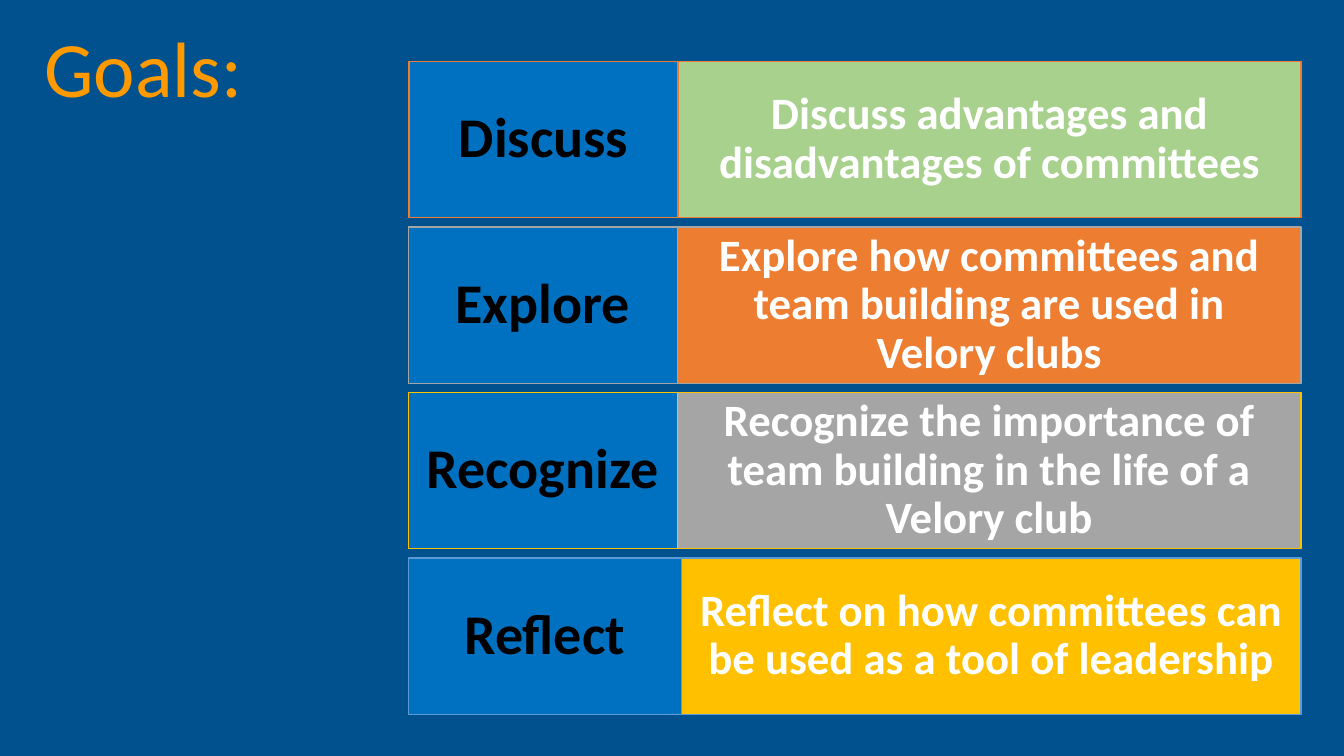
from pptx import Presentation
from pptx.dml.color import RGBColor
from pptx.enum.shapes import MSO_SHAPE
from pptx.enum.text import MSO_ANCHOR, MSO_AUTO_SIZE, PP_ALIGN
from pptx.util import Cm, Pt

NAVY = RGBColor(0x00, 0x51, 0x8E)
BLUE = RGBColor(0x00, 0x70, 0xC0)
SKY = RGBColor(0x5B, 0x9B, 0xD5)
GREEN = RGBColor(0xA9, 0xD1, 0x8E)
ORANGE = RGBColor(0xED, 0x7D, 0x31)
GREY = RGBColor(0xA5, 0xA5, 0xA5)
GOLD = RGBColor(0xFF, 0xC0, 0x00)
AMBER = RGBColor(0xFF, 0x99, 0x00)
WHITE = RGBColor(0xFF, 0xFF, 0xFF)
BLACK = RGBColor(0x00, 0x00, 0x00)

# Goal rows, in cm
ROW_TOP, ROW_PITCH, ROW_HEIGHT = 1.55, 4.17, 3.94
ROW_RIGHT = 32.79

# Verb, goal, goal fill, outline, left edge, divider between verb and goal
GOALS = [
    ("Discuss", "Discuss advantages and disadvantages of committees",
     GREEN, ORANGE, 10.31, 17.09),
    ("Explore", "Explore how committees and team building are used in Velory clubs",
     ORANGE, GREY, 10.29, 17.07),
    ("Recognize", "Recognize the importance of team building in the life of a Velory club",
     GREY, GOLD, 10.29, 17.07),
    ("Reflect", "Reflect on how committees can be used as a tool of leadership",
     GOLD, SKY, 10.29, 17.17),
]


class GoalSlide:
    """Holds the text style and the slide being built."""

    font_name = "Calibri"
    line_spacing = 0.9

    def __init__(self, presentation, background):
        self.slide = presentation.slides.add_slide(presentation.slide_layouts[5])
        self.slide.background.fill.solid()
        self.slide.background.fill.fore_color.rgb = background

    def set_text(self, frame, text, size, color, bold, align):
        frame.text = text
        frame.word_wrap = True
        frame.auto_size = MSO_AUTO_SIZE.NONE
        frame.vertical_anchor = MSO_ANCHOR.MIDDLE
        paragraph = frame.paragraphs[0]
        paragraph.alignment = align
        paragraph.line_spacing = self.line_spacing
        paragraph.font.name = self.font_name
        paragraph.font.size = Pt(size)
        paragraph.font.bold = bold
        paragraph.font.color.rgb = color

    def title(self, text, left, top, width, height):
        heading = self.slide.shapes.title
        heading.left, heading.top = Cm(left), Cm(top)
        heading.width, heading.height = Cm(width), Cm(height)
        self.set_text(heading.text_frame, text, 56, AMBER, False, PP_ALIGN.RIGHT)

    def box(self, text, left, right, top, fill, outline, size, color, inset):
        panel = self.slide.shapes.add_shape(
            MSO_SHAPE.RECTANGLE, Cm(left), Cm(top), Cm(right - left), Cm(ROW_HEIGHT))
        panel.shadow.inherit = False
        panel.fill.solid()
        panel.fill.fore_color.rgb = fill
        panel.line.color.rgb = outline
        panel.line.width = Pt(1)
        frame = panel.text_frame
        frame.margin_left = frame.margin_right = Cm(inset)
        frame.margin_top = frame.margin_bottom = 0
        self.set_text(frame, text, size, color, True, PP_ALIGN.CENTER)


def main():
    presentation = Presentation()
    presentation.slide_width, presentation.slide_height = Cm(33.87), Cm(19.05)
    goals = GoalSlide(presentation, NAVY)

    # Heading
    goals.title("Goals:", 0.76, 0.3, 5.61, 3.05)

    # One row per goal: the verb on top of the goal's left edge
    for row, (verb, goal, fill, outline, left, divider) in enumerate(GOALS):
        top = ROW_TOP + row * ROW_PITCH
        goals.box(goal, divider, ROW_RIGHT, top, fill, outline, 32, WHITE, 0.3)
        goals.box(verb, left, divider, top, BLUE, outline, 40, BLACK, 0.2)

    presentation.save("out.pptx")


if __name__ == "__main__":
    main()
